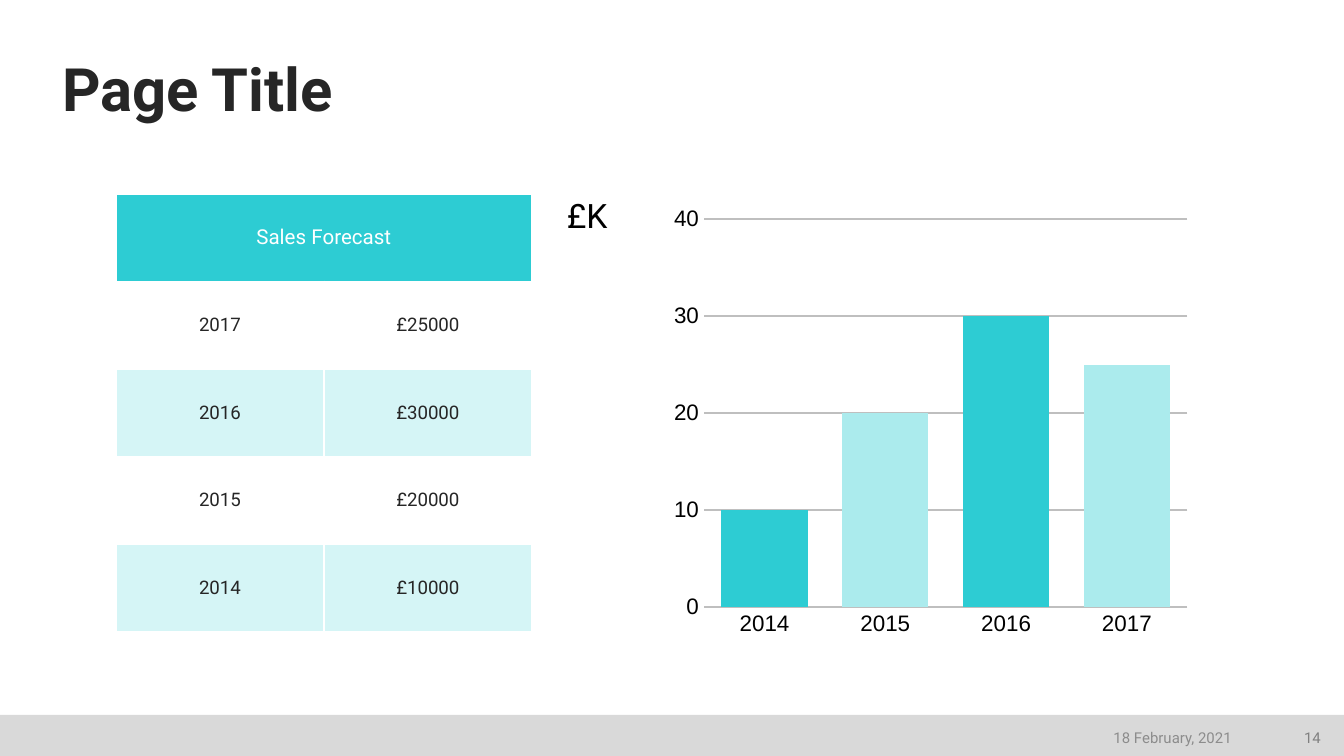
from lxml.etree import SubElement
from pptx import Presentation
from pptx.chart.data import CategoryChartData
from pptx.dml.color import RGBColor
from pptx.enum.chart import XL_CHART_TYPE, XL_TICK_MARK
from pptx.enum.shapes import MSO_SHAPE
from pptx.enum.text import MSO_ANCHOR, PP_ALIGN
from pptx.oxml.ns import qn
from pptx.util import Emu, Pt

TEAL, PALE_TEAL, LIGHT_TEAL = "2DCCD3", "D5F5F6", "ABEBED"
INK, BLACK, WHITE = "262626", "000000", "FFFFFF"
BAR_GREY, LINE_GREY = "D9D9D9", "BFBFBF"
FORECAST = {"2014": 10, "2015": 20, "2016": 30, "2017": 25}


def px(length):
    """Turn pixels into EMU on a slide 1344 pixels wide."""
    return Emu(round(length * 9144000 / 1344))


def box(left, top, width, height):
    """Turn a pixel rectangle into EMU arguments."""
    return [px(side) for side in (left, top, width, height)]


def paint(fill, colour):
    """Give a fill one solid colour."""
    fill.solid()
    fill.fore_color.rgb = RGBColor.from_string(colour)


def style_font(font, size, colour, name="Roboto", bold=False):
    """Set the face, size, weight and colour of a font."""
    font.name, font.size, font.bold = name, Pt(size), bold
    font.color.rgb = RGBColor.from_string(colour)


def write(frame, text, size, colour, align=PP_ALIGN.LEFT, bold=False):
    """Fill a text frame with one formatted paragraph."""
    frame.text = text
    paragraph = frame.paragraphs[0]
    paragraph.alignment = align
    style_font(paragraph.runs[0].font, size, colour, bold=bold)
    return paragraph


def set_margins(target, horizontal, vertical):
    """Set the inner margins of a text frame or a cell in pixels."""
    target.margin_left = target.margin_right = px(horizontal)
    target.margin_top = target.margin_bottom = px(vertical)


def add_label(slide, area, text, size, colour, anchor=MSO_ANCHOR.TOP,
              align=PP_ALIGN.LEFT, bold=False, margins=(0, 0)):
    """Add a wrapped text box and return its paragraph."""
    frame = slide.shapes.add_textbox(*box(*area)).text_frame
    frame.word_wrap = True
    frame.vertical_anchor = anchor
    set_margins(frame, *margins)
    return write(frame, text, size, colour, align, bold)


def add_footer(slide):
    """Add the grey footer bar with the date and the page number."""
    bar = slide.shapes.add_shape(MSO_SHAPE.RECTANGLE, *box(0, 715, 1344, 41))
    bar.shadow.inherit = False
    paint(bar.fill, BAR_GREY)
    bar.line.fill.background()
    for area, text, colour in (
        ((943, 720, 302, 35), "18 February, 2021", "8C8C8C"),
        ((1285, 720, 49, 35), "14", "808080"),
    ):
        add_label(slide, area, text, 8, colour, MSO_ANCHOR.MIDDLE,
                  PP_ALIGN.RIGHT, margins=(13, 7))


def fill_cell(cell, text, size, colour, background, margin):
    """Write centred text into a table cell and colour it."""
    paint(cell.fill, background)
    cell.vertical_anchor = MSO_ANCHOR.MIDDLE
    set_margins(cell, margin, margin)
    write(cell.text_frame, text, size, colour, PP_ALIGN.CENTER)


def add_forecast_table(slide):
    """Add the sales table, latest year first."""
    table = slide.shapes.add_table(
        len(FORECAST) + 1, 2, *box(116, 194, 416, 438)).table
    header = table.cell(0, 0)
    header.merge(table.cell(0, 1))
    fill_cell(header, "Sales Forecast", 11, WHITE, TEAL, 7)
    for row, (year, thousands) in enumerate(reversed(FORECAST.items()), 1):
        background = WHITE if row % 2 else PALE_TEAL
        for column, text in enumerate((year, f"£{thousands}000")):
            fill_cell(table.cell(row, column), text, 10, INK, background, 3)


def style_line(line):
    """Draw a thin grey chart line."""
    paint(line.fill, LINE_GREY)
    line.width = Pt(1)


def fix_plot_area(chart, x, y, w, h):
    """Fix the inner plot area as fractions of the chart."""
    plot_area = chart._chartSpace.chart.plotArea
    for old in plot_area.findall(qn("c:layout")):
        plot_area.remove(old)
    layout = plot_area.makeelement(qn("c:layout"))
    plot_area.insert(0, layout)
    manual = SubElement(layout, qn("c:manualLayout"))
    settings = {"layoutTarget": "inner", "xMode": "edge", "yMode": "edge",
                "x": x, "y": y, "w": w, "h": h}
    for tag, value in settings.items():
        SubElement(manual, qn(f"c:{tag}")).set("val", str(value))


def add_forecast_chart(slide):
    """Add the column chart with alternating teal columns."""
    data = CategoryChartData()
    data.categories = list(FORECAST)
    data.add_series("Series 1", list(FORECAST.values()))
    chart = slide.shapes.add_chart(
        XL_CHART_TYPE.COLUMN_CLUSTERED, *box(671, 188, 519, 466), data).chart
    chart.has_legend = chart.has_title = False
    style_font(chart.font, 10, BLACK)
    fix_plot_area(chart, 0.064, 0.067, 0.931, 0.832)

    years, amounts = chart.category_axis, chart.value_axis
    for axis in (years, amounts):
        axis.major_tick_mark = axis.minor_tick_mark = XL_TICK_MARK.NONE
        style_font(axis.tick_labels.font, 12, BLACK, "Arial")
    style_line(years.format.line)
    amounts.format.line.fill.background()
    style_line(amounts.major_gridlines.format.line)
    amounts.minimum_scale, amounts.maximum_scale = 0, 40
    amounts.major_unit = 10

    plot = chart.plots[0]
    plot.gap_width = 40
    plot.vary_by_categories = False
    columns = plot.series[0]
    paint(columns.format.fill, TEAL)
    for index in range(1, len(FORECAST), 2):
        paint(columns.points[index].format.fill, LIGHT_TEAL)


def main():
    """Build the sales forecast slide."""
    deck = Presentation()
    deck.slide_width, deck.slide_height = px(1344), px(756)
    slide = deck.slides.add_slide(deck.slide_layouts[6])
    add_footer(slide)
    title = add_label(slide, (62, 54, 1223, 70), "Page Title", 32, INK,
                      MSO_ANCHOR.BOTTOM, bold=True)
    title.line_spacing = 0.9
    add_forecast_table(slide)
    add_forecast_chart(slide)
    add_label(slide, (567, 195, 67, 40), "£K", 18, BLACK)
    deck.save("out.pptx")


if __name__ == "__main__":
    main()
